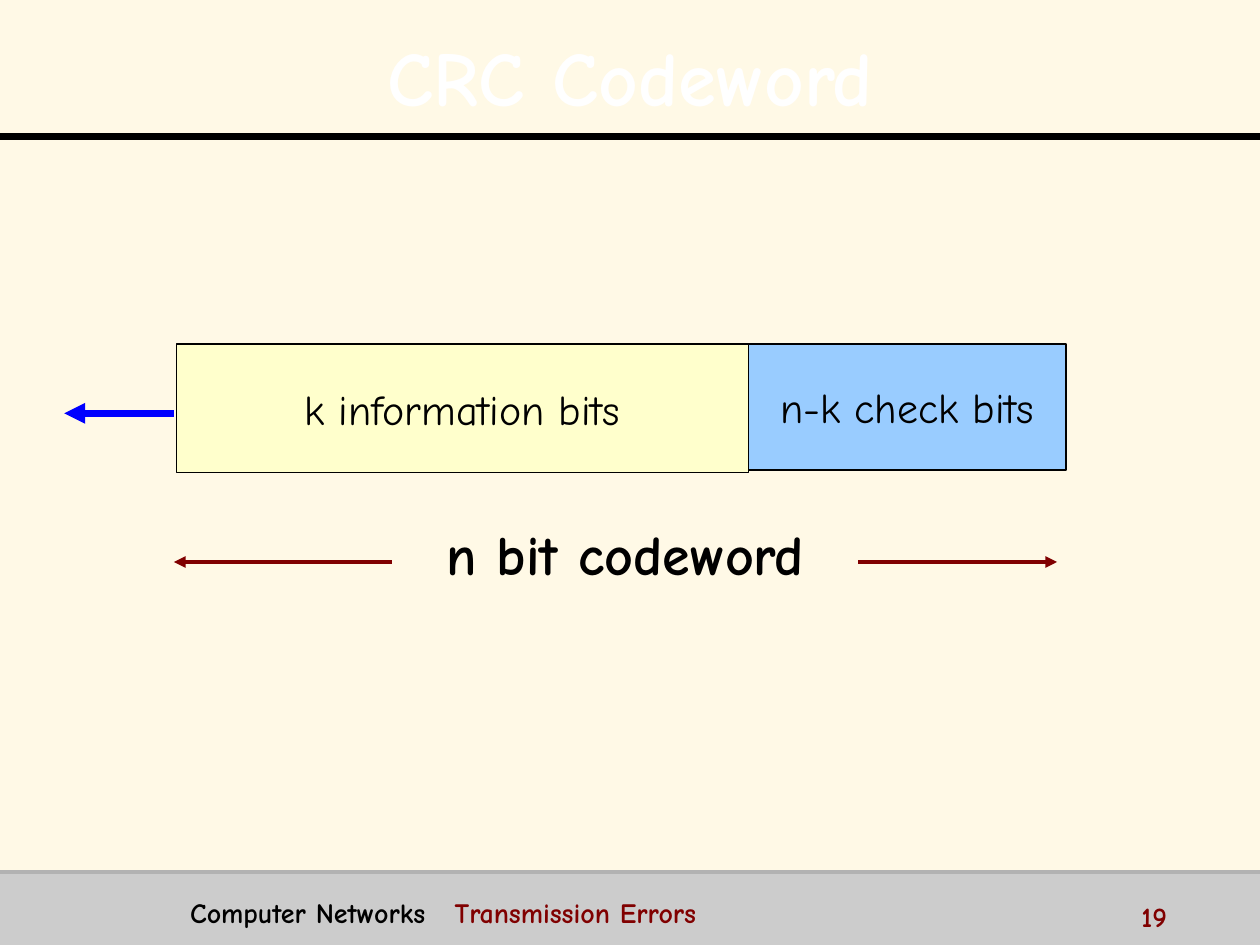
from lxml import etree
from pptx import Presentation
from pptx.dml.color import RGBColor
from pptx.enum.shapes import MSO_CONNECTOR, MSO_SHAPE
from pptx.enum.text import MSO_ANCHOR, PP_ALIGN
from pptx.oxml.ns import qn
from pptx.util import Inches, Pt

STRAIGHT = MSO_CONNECTOR.STRAIGHT
RECTANGLE = MSO_SHAPE.RECTANGLE
MIDDLE = MSO_ANCHOR.MIDDLE
TOP = MSO_ANCHOR.TOP
CENTER = PP_ALIGN.CENTER
LEFT = PP_ALIGN.LEFT

FONT = "Comic Neue"
CREAM = RGBColor(0xFF, 0xF9, 0xE6)
WHITE = RGBColor(0xFF, 0xFF, 0xFF)
BLACK = RGBColor(0x00, 0x00, 0x00)
LIGHT_GRAY = RGBColor(0xCC, 0xCC, 0xCC)
GRAY = RGBColor(0xB2, 0xB2, 0xB2)
YELLOW = RGBColor(0xFF, 0xFF, 0xCC)
SKY = RGBColor(0x99, 0xCC, 0xFF)
MAROON = RGBColor(0x80, 0x00, 0x00)
BLUE = RGBColor(0x00, 0x00, 0xFF)


def add_run(paragraph, text, size, color, bold=True):
    run = paragraph.add_run()
    run.text = text
    run.font.name = FONT
    run.font.size = Pt(size)
    run.font.bold = bold
    run.font.color.rgb = color
    return run


def add_text_shadow(run):
    properties = run.font._element
    effects = etree.Element(qn("a:effectLst"))
    shadow = etree.SubElement(effects, qn("a:outerShdw"), dist="35921", dir="2700000", algn="ctr")
    etree.SubElement(shadow, qn("a:srgbClr"), val=str(BLACK))
    properties.find(qn("a:solidFill")).addnext(effects)


def add_tab_stop(paragraph, position):
    tabs = etree.SubElement(paragraph._p.get_or_add_pPr(), qn("a:tabLst"))
    etree.SubElement(tabs, qn("a:tab"), pos=str(Inches(position)), algn="l")


def add_title(slide, text):
    title = slide.shapes.title
    title.left, title.top = Inches(0.2), Inches(0.13)
    title.width, title.height = Inches(9.61), Inches(0.87)
    title.text_frame.vertical_anchor = MIDDLE
    paragraph = title.text_frame.paragraphs[0]
    paragraph.alignment = CENTER
    paragraph.line_spacing = 1.1
    add_text_shadow(add_run(paragraph, text, 44, WHITE))


def add_box(slide, left, top, width, height, fill, outline=None, text=None):
    box = slide.shapes.add_shape(
        RECTANGLE, Inches(left), Inches(top), Inches(width), Inches(height))
    box.shadow.inherit = False
    box.fill.solid()
    box.fill.fore_color.rgb = fill
    if outline is None:
        box.line.fill.background()
    else:
        box.line.color.rgb = outline
        box.line.width = Pt(0.75)
    if text:
        box.text_frame.word_wrap = False
        box.text_frame.vertical_anchor = MIDDLE
        paragraph = box.text_frame.paragraphs[0]
        paragraph.alignment = CENTER
        add_run(paragraph, text, 24, BLACK, bold=False)


def add_line(slide, start, end, y, color, width, arrow=False):
    line = slide.shapes.add_connector(
        STRAIGHT, Inches(start), Inches(y), Inches(end), Inches(y))
    line.line.color.rgb = color
    line.line.width = Pt(width)
    if arrow:
        etree.SubElement(line.line._get_or_add_ln(), qn("a:tailEnd"), type="triangle")
    etree.SubElement(line._element.spPr, qn("a:effectLst"))


def add_label(slide, left, top, width, height, runs, size, alignment=LEFT, tab=None):
    label = slide.shapes.add_textbox(
        Inches(left), Inches(top), Inches(width), Inches(height))
    label.text_frame.word_wrap = True
    label.text_frame.vertical_anchor = TOP
    paragraph = label.text_frame.paragraphs[0]
    paragraph.alignment = alignment
    if tab:
        add_tab_stop(paragraph, tab)
    for text, color in runs:
        add_run(paragraph, text, size, color)


def main():
    presentation = Presentation()
    presentation.slide_width = Inches(10)
    presentation.slide_height = Inches(7.5)
    slide = presentation.slides.add_slide(presentation.slide_layouts[5])
    slide.background.fill.solid()
    slide.background.fill.fore_color.rgb = CREAM

    add_box(slide, 0, 6.92, 10, 0.58, LIGHT_GRAY)
    add_line(slide, 0, 10, 1.08, BLACK, 4)
    add_line(slide, 0, 10, 6.92, GRAY, 2)
    add_title(slide, "CRC Codeword")

    add_label(slide, 1.46, 4.07, 7.01, 0.71, [("n bit codeword", BLACK)], 32, CENTER)
    add_box(slide, 1.4, 2.73, 4.54, 1.02, YELLOW, BLACK, "k information bits")
    add_box(slide, 5.94, 2.73, 2.52, 1, SKY, BLACK, "n-k check bits")
    add_line(slide, 3.11, 1.38, 4.46, MAROON, 2.25, arrow=True)
    add_line(slide, 6.81, 8.39, 4.46, MAROON, 2.25, arrow=True)
    add_line(slide, 1.38, 0.51, 3.28, BLUE, 4, arrow=True)

    add_label(slide, 8.96, 7.09, 1, 0.25, [("19", MAROON)], 16)
    add_label(slide, 1.41, 7.06, 7.28, 0.31,
              [("Computer Networks\t", BLACK), ("Transmission Errors", MAROON)], 16, tab=2.1)
    presentation.save("out.pptx")


if __name__ == "__main__":
    main()
